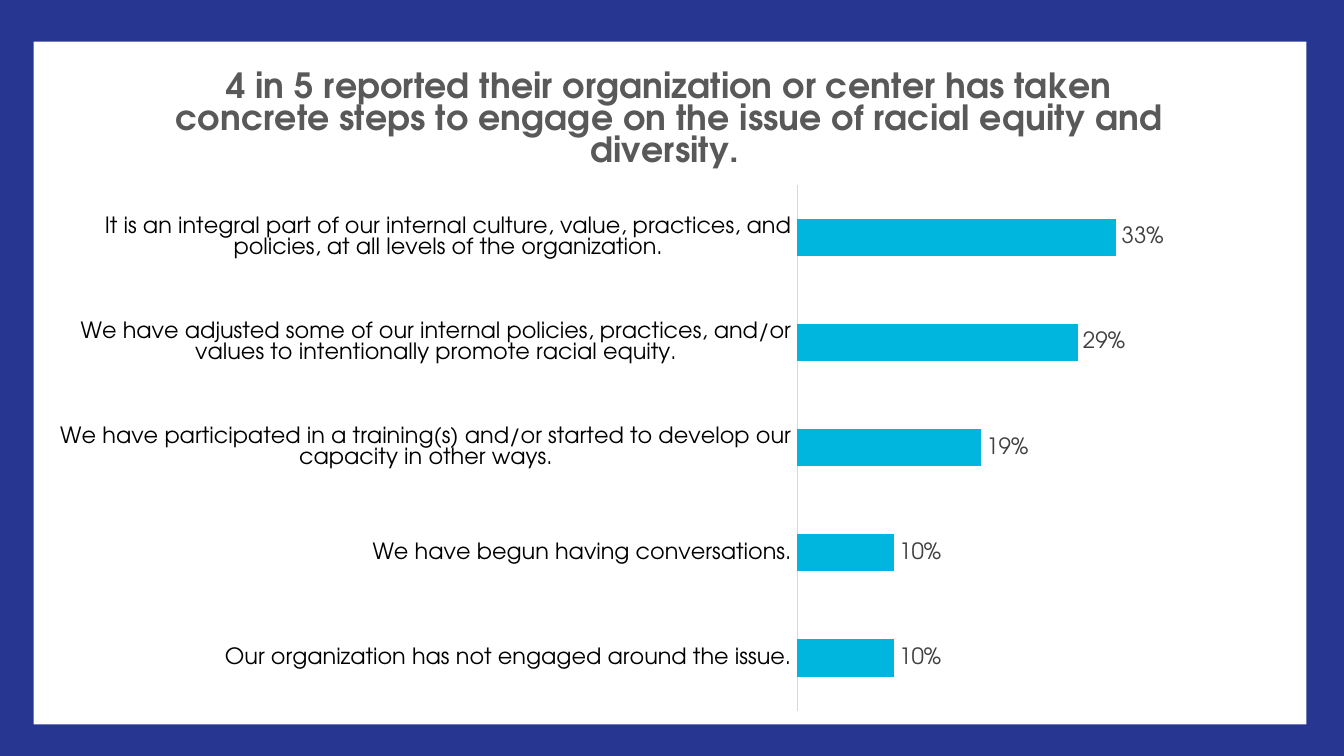
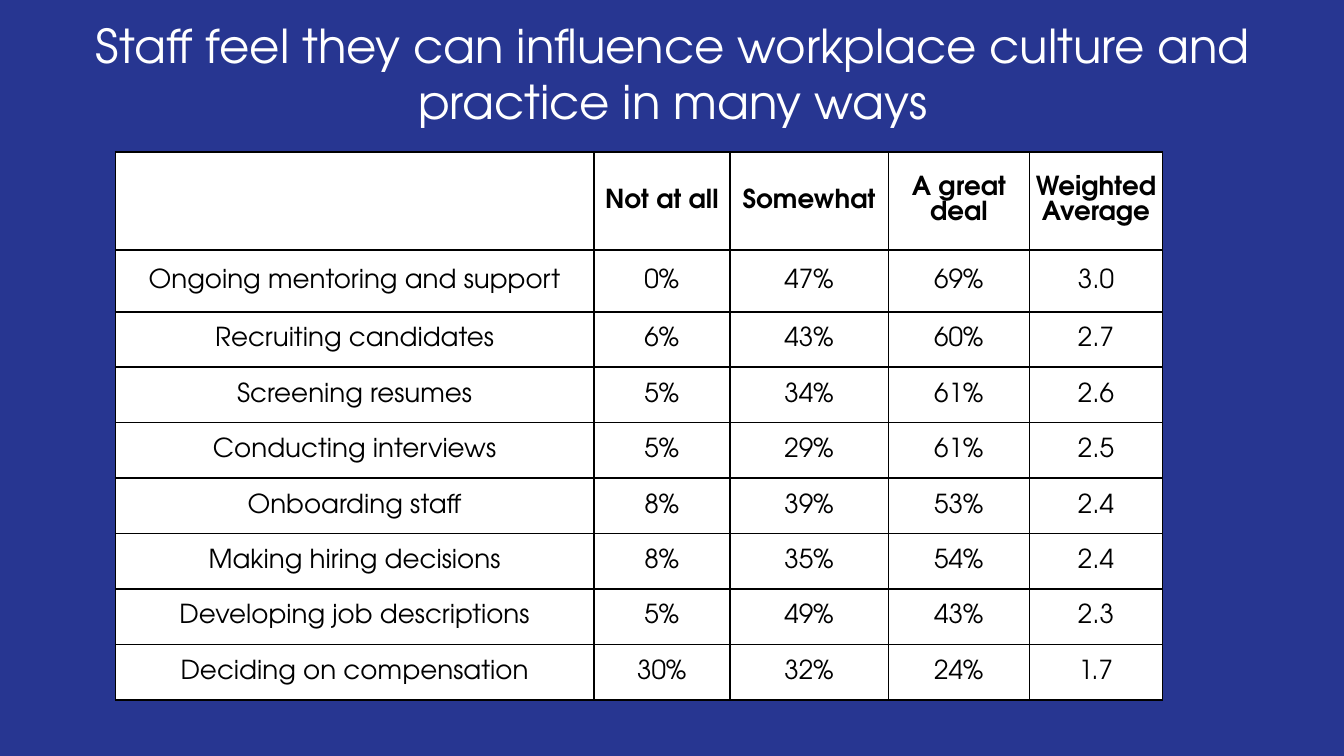
from pptx import Presentation
from pptx.chart.data import CategoryChartData
from pptx.dml.color import RGBColor
from pptx.enum.chart import XL_CHART_TYPE, XL_LABEL_POSITION, XL_TICK_LABEL_POSITION, XL_TICK_MARK
from pptx.enum.shapes import MSO_SHAPE
from pptx.enum.text import MSO_ANCHOR, PP_ALIGN
from pptx.oxml import parse_xml
from pptx.oxml.ns import nsdecls, qn
from pptx.util import Inches, Pt

FONT = "TeX Gyre Adventor"
BLUE, CYAN, WHITE, BLACK = "273691", "00B6DE", "FFFFFF", "000000"
DARK, GREY, PALE = "404040", "595959", "D9D9D9"
WIDE = 10
HIGH = WIDE * 9 / 16

STEPS = [
    ("Our organization has not engaged around the issue.", 0.10),
    ("We have begun having conversations.", 0.10),
    ("We have participated in a training(s) and/or started to develop our "
     "capacity in other ways.", 0.19),
    ("We have adjusted some of our internal policies, practices, and/or values "
     "to intentionally promote racial equity.", 0.29),
    ("It is an integral part of our internal culture, value, practices, and "
     "policies, at all levels of the organization.", 0.33),
]
WAYS = [
    ("", "Not at all", "Somewhat", "A great deal", "Weighted Average"),
    ("Ongoing mentoring and support", "0%", "47%", "69%", "3.0"),
    ("Recruiting candidates", "6%", "43%", "60%", "2.7"),
    ("Screening resumes", "5%", "34%", "61%", "2.6"),
    ("Conducting interviews", "5%", "29%", "61%", "2.5"),
    ("Onboarding staff", "8%", "39%", "53%", "2.4"),
    ("Making hiring decisions", "8%", "35%", "54%", "2.4"),
    ("Developing job descriptions", "5%", "49%", "43%", "2.3"),
    ("Deciding on compensation", "30%", "32%", "24%", "1.7"),
]


def color(code):
    return RGBColor.from_string(code)


def paint(fill, code):
    fill.solid()
    fill.fore_color.rgb = color(code)


def style(font, size, code=BLACK, bold=False):
    font.name, font.size, font.bold = FONT, Pt(size), bold
    font.color.rgb = color(code)


def write(frame, text, size, code=BLACK, bold=False):
    frame.word_wrap = True
    para = frame.paragraphs[0]
    para.alignment = PP_ALIGN.CENTER
    run = para.add_run()
    run.text = text
    style(run.font, size, code, bold)


def add_page(deck):
    """Add a blank slide covered by the blue ground."""
    page = deck.slides.add_slide(deck.slide_layouts[6])
    ground = page.shapes.add_shape(MSO_SHAPE.RECTANGLE, 0, 0, Inches(WIDE), Inches(HIGH))
    ground.shadow.inherit = False
    paint(ground.fill, BLUE)
    ground.line.fill.background()
    return page


def add_title(page, text, box):
    frame = page.shapes.add_textbox(*map(Inches, box)).text_frame
    frame.vertical_anchor = MSO_ANCHOR.MIDDLE
    write(frame, text, 25, WHITE)


def place_plot(chart, x, y, w, h):
    """Fix the inner plot area, in fractions of the chart."""
    area = chart.plots[0]._element.getparent()
    for old in area.findall(qn("c:layout")):
        area.remove(old)
    sides = "".join(f'<c:{k} val="{v}"/>' for k, v in zip("xywh", (x, y, w, h)))
    area.insert(0, parse_xml(
        f'<c:layout {nsdecls("c")}><c:manualLayout><c:layoutTarget val="inner"/>'
        f'<c:xMode val="edge"/><c:yMode val="edge"/>{sides}'
        '</c:manualLayout></c:layout>'))


def fill_chart(chart, code):
    """Paint the whole chart area."""
    space = chart._chartSpace
    space.find(qn("c:chart")).addnext(parse_xml(
        f'<c:spPr {nsdecls("c", "a")}><a:solidFill><a:srgbClr val="{code}"/>'
        '</a:solidFill><a:ln><a:noFill/></a:ln></c:spPr>'))


def add_bars(page, title, steps, box):
    data = CategoryChartData(number_format="0%")
    data.categories = [name for name, _ in steps]
    data.add_series("Series 1", [share for _, share in steps])
    chart = page.shapes.add_chart(
        XL_CHART_TYPE.BAR_CLUSTERED, *map(Inches, box), data).chart
    style(chart.font, 10)
    chart.has_legend = False
    write(chart.chart_title.text_frame, title, 18.6, GREY, bold=True)
    chart.chart_title.include_in_layout = False
    fill_chart(chart, WHITE)
    place_plot(chart, 0.6, 0.21, 0.38, 0.77)

    names = chart.category_axis
    names.major_tick_mark = names.minor_tick_mark = XL_TICK_MARK.NONE
    names.tick_label_position = XL_TICK_LABEL_POSITION.NEXT_TO_AXIS
    style(names.tick_labels.font, 12)
    names.format.line.color.rgb = color(PALE)
    names.format.line.width = Pt(0.75)

    scale = chart.value_axis
    scale.minimum_scale, scale.maximum_scale = 0, 0.5
    scale.has_major_gridlines = False
    scale.major_tick_mark = XL_TICK_MARK.NONE
    scale.visible = False

    plot = chart.plots[0]
    plot.gap_width = 182
    plot.vary_by_categories = False
    bars = plot.series[0]
    paint(bars.format.fill, CYAN)
    marks = bars.data_labels
    marks.show_value = True
    marks.number_format, marks.number_format_is_linked = "0%", False
    marks.position = XL_LABEL_POSITION.OUTSIDE_END
    style(marks.font, 12, DARK)


def edge(cell, code, width):
    """Draw all four borders of a cell."""
    props = cell._tc.get_or_add_tcPr()
    for spot, side in enumerate(("lnL", "lnR", "lnT", "lnB")):
        props.insert(spot, parse_xml(
            f'<a:{side} {nsdecls("a")} w="{Pt(width)}"><a:solidFill>'
            f'<a:srgbClr val="{code}"/></a:solidFill></a:{side}>'))


def add_grid(page, rows, box, wide, tops):
    """Add the table; rows after the given top heights share the rest."""
    table = page.shapes.add_table(len(rows), len(wide), *map(Inches, box)).table
    table.horz_banding = False
    left = len(rows) - len(tops)
    high = [*tops] + [(box[3] - sum(tops)) / left] * left
    for col, size in zip(table.columns, wide):
        col.width = Inches(size)
    for row, size in zip(table.rows, high):
        row.height = Inches(size)
    for i, row in enumerate(rows):
        for j, text in enumerate(row):
            cell = table.cell(i, j)
            cell.margin_left = cell.margin_right = 0
            cell.margin_top = cell.margin_bottom = 0
            cell.vertical_anchor = MSO_ANCHOR.MIDDLE
            paint(cell.fill, WHITE)
            edge(cell, BLACK, 1)
            if text:
                write(cell.text_frame, text, 14, bold=i == 0)


def main():
    deck = Presentation()
    deck.slide_width, deck.slide_height = Inches(WIDE), Inches(HIGH)

    add_bars(add_page(deck),
             "4 in 5 reported their organization or center has taken concrete "
             "steps to engage on the issue of racial equity and diversity. ",
             STEPS, (0.25, 0.31, 9.47, 5.08))

    page = add_page(deck)
    add_grid(page, WAYS, (0.86, 1.13, 7.8, 4.08),
             (3.56, 1.01, 1.18, 1.05, 0.99), (0.73, 0.46))
    add_title(page, "Staff feel they can influence workplace culture and "
              "practice in many ways", (0.41, 0.1, 9.19, 0.88))
    deck.save("out.pptx")


if __name__ == "__main__":
    main()
